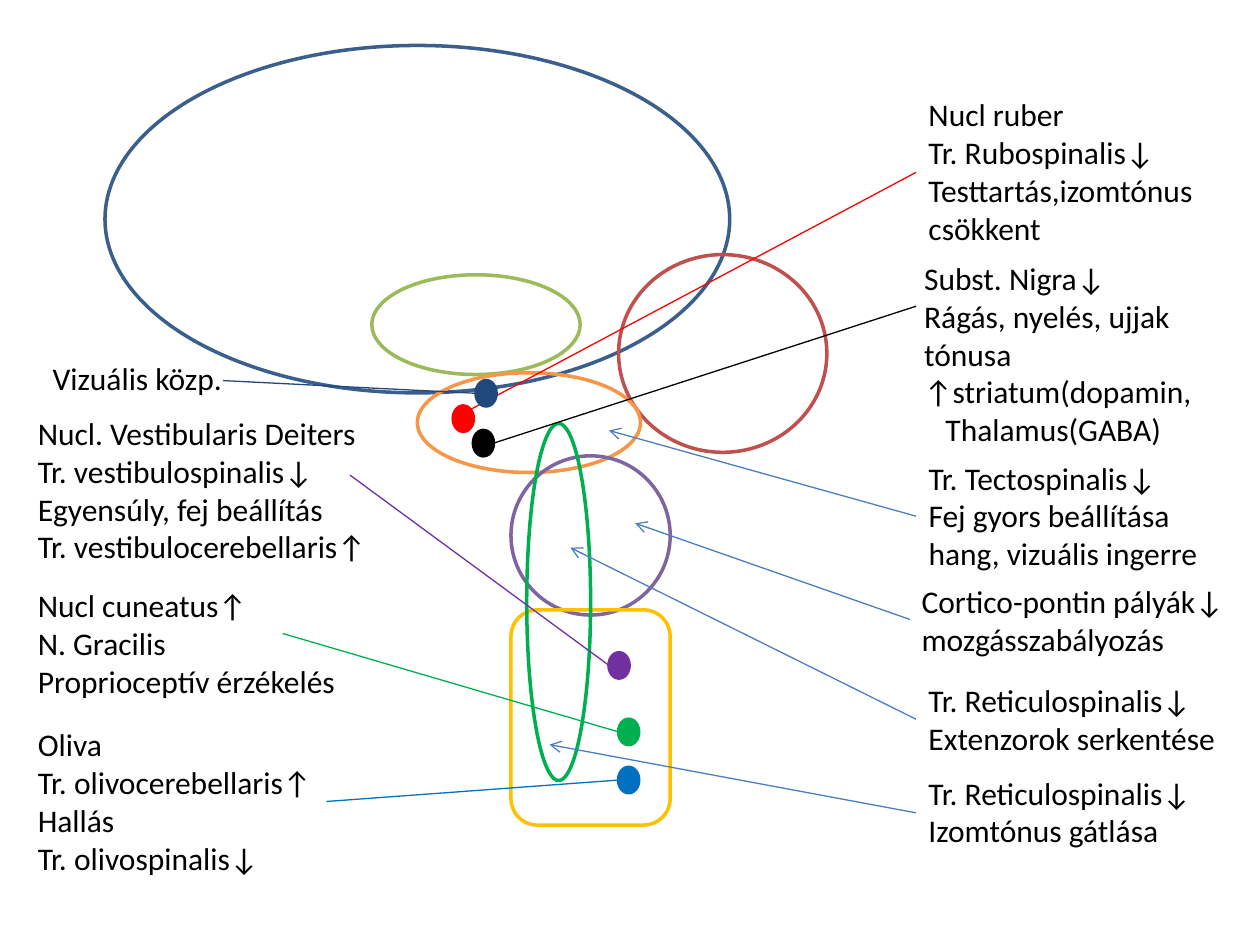
from lxml import etree
from pptx import Presentation
from pptx import util as u
from pptx.dml.color import RGBColor
from pptx.enum import shapes, text
from pptx.oxml import ns

COLOURS = {
    "cerebrum": "3A5F8C", "cerebellum": "C0504D", "thalamus": "9BBB59",
    "midbrain": "F79646", "pons": "8064A2", "medulla": "FFC000",
    "green": "00B050", "red": "FF0000", "black": "000000",
    "blue": "0070C0", "violet": "7030A0", "navy": "1F497D", "tract": "4B7EBC",
}
OVAL = shapes.MSO_SHAPE.OVAL
ROUNDED = shapes.MSO_SHAPE.ROUNDED_RECTANGLE
DOT_WIDTH, DOT_HEIGHT = 11.5, 14.5
LEFT, RIGHT = 14.5, 523.5

REGIONS = [
    (OVAL, "cerebrum", 60, 26, 357, 198.5),
    (OVAL, "cerebellum", 353.5, 145.5, 119, 113),
    (OVAL, "thalamus", 212.5, 157, 119, 57),
    (OVAL, "midbrain", 238.5, 213, 127.5, 57),
    (OVAL, "pons", 292, 260.5, 91, 91),
    (ROUNDED, "medulla", 292, 348.5, 91, 123),
    (OVAL, "green", 301, 242, 36.5, 204),
]
NUCLEI = [
    ("red", 259, 232, (RIGHT, 98.5), 0),
    ("black", 270.5, 246, (RIGHT, 175), DOT_WIDTH),
    ("green", 353.5, 411, (161.5, 362), 0),
    ("blue", 353.5, 438.5, (186.5, 458), 0),
    ("violet", 348, 373, (200, 271.5), 0),
    ("navy", 272, 217.5, (127.5, 217.5), 0),
]
TRACTS = [
    ((RIGHT, 295), (348, 246)),
    ((520, 354), (363, 299)),
    ((RIGHT, 411), (326, 313)),
    ((RIGHT, 464.5), (314, 425.5)),
]
LABELS = [
    (["Nucl ruber", "Tr. Rubospinalis↓", "Testtartás,izomtónus csökkent"],
     dict(left=RIGHT, top=51, width=196, height=94.5, wrap=True)),
    (["Subst. Nigra↓", "Rágás, nyelés, ujjak tónusa",
      "↑striatum(dopamin,", "Thalamus(GABA)"],
     dict(left=521, top=144.5, width=207.5, height=116.5, wrap=True,
          last_indent=12.2)),
    (["Tr. Tectospinalis↓", "Fej gyors beállítása hang, vizuális ingerre"],
     dict(left=RIGHT, top=258.5, width=175.5, height=72.5, wrap=True)),
    (["Cortico-pontin pályák↓", "mozgásszabályozás"],
     dict(left=519.5, top=329, width=189.5, height=51)),
    (["Tr. Reticulospinalis↓", "Extenzorok serkentése"],
     dict(left=RIGHT, top=385.5, width=180, height=51)),
    (["Tr. Reticulospinalis↓", "Izomtónus gátlása"],
     dict(left=RIGHT, top=438.5, width=166, height=51)),
    (["Vizuális közp."], dict(left=23, top=201.5, width=112.5, height=29)),
    (["Nucl. Vestibularis Deiters", "Tr. vestibulospinalis↓",
      "Egyensúly, fej beállítás", "Tr. vestibulocerebellaris↑"],
     dict(left=LEFT, top=233, width=204.5, height=94.5)),
    (["Nucl cuneatus↑", "N. Gracilis", "Proprioceptív érzékelés"],
     dict(left=LEFT, top=331.5, width=186.5, height=72.5)),
    (["Oliva", "Tr. olivocerebellaris↑", "Hallás", "Tr. olivospinalis↓"],
     dict(left=LEFT, top=411, width=173, height=94.5)),
]


def colour(name):
    return RGBColor.from_string(COLOURS[name])


def add_outline(slide, kind, name, left, top, width, height, filled=False):
    shape = slide.shapes.add_shape(kind, *map(u.Pt, (left, top, width, height)))
    shape.shadow.inherit = False
    shape.line.color.rgb = colour(name)
    shape.line.width = u.Pt(2)
    if filled:
        shape.fill.solid()
        shape.fill.fore_color.rgb = colour(name)
    else:
        shape.fill.background()


def add_line(slide, start, end, name, arrow=False):
    connector = slide.shapes.add_connector(
        shapes.MSO_CONNECTOR.STRAIGHT, *map(u.Pt, start + end))
    connector.line.color.rgb = colour(name)
    connector.line.width = u.Pt(0.75)
    if arrow:
        outline = connector.line._get_or_add_ln()
        etree.SubElement(outline, ns.qn("a:tailEnd"), type="arrow")
    etree.SubElement(connector._element.spPr, ns.qn("a:effectLst"))


def add_nucleus(slide, name, left, top, label_end, side):
    add_outline(slide, OVAL, name, left, top, DOT_WIDTH, DOT_HEIGHT, filled=True)
    add_line(slide, (left + side, top + DOT_HEIGHT / 2), label_end, name)


def add_label(slide, lines, *, left, top, width, height, wrap=False, last_indent=0):
    box = slide.shapes.add_textbox(*map(u.Pt, (left, top, width, height)))
    frame = box.text_frame
    frame.word_wrap = wrap
    frame.auto_size = text.MSO_AUTO_SIZE.SHAPE_TO_FIT_TEXT
    frame.text = "\n".join(lines)
    if last_indent:
        properties = frame.paragraphs[-1]._p.get_or_add_pPr()
        properties.set("marL", str(u.Pt(last_indent)))
    for paragraph in frame.paragraphs:
        for run in paragraph.runs:
            run.font.name = "Calibri"
            run.font.size = u.Pt(18)
            run.font.color.rgb = colour("black")


def main():
    presentation = Presentation()
    presentation.slide_width = u.Pt(720)
    presentation.slide_height = u.Pt(540)
    slide = presentation.slides.add_slide(presentation.slide_layouts[6])
    for region in REGIONS:
        add_outline(slide, *region)
    for nucleus in NUCLEI:
        add_nucleus(slide, *nucleus)
    for start, end in TRACTS:
        add_line(slide, start, end, "tract", arrow=True)
    for lines, layout in LABELS:
        add_label(slide, lines, **layout)
    presentation.save("out.pptx")


if __name__ == "__main__":
    main()
